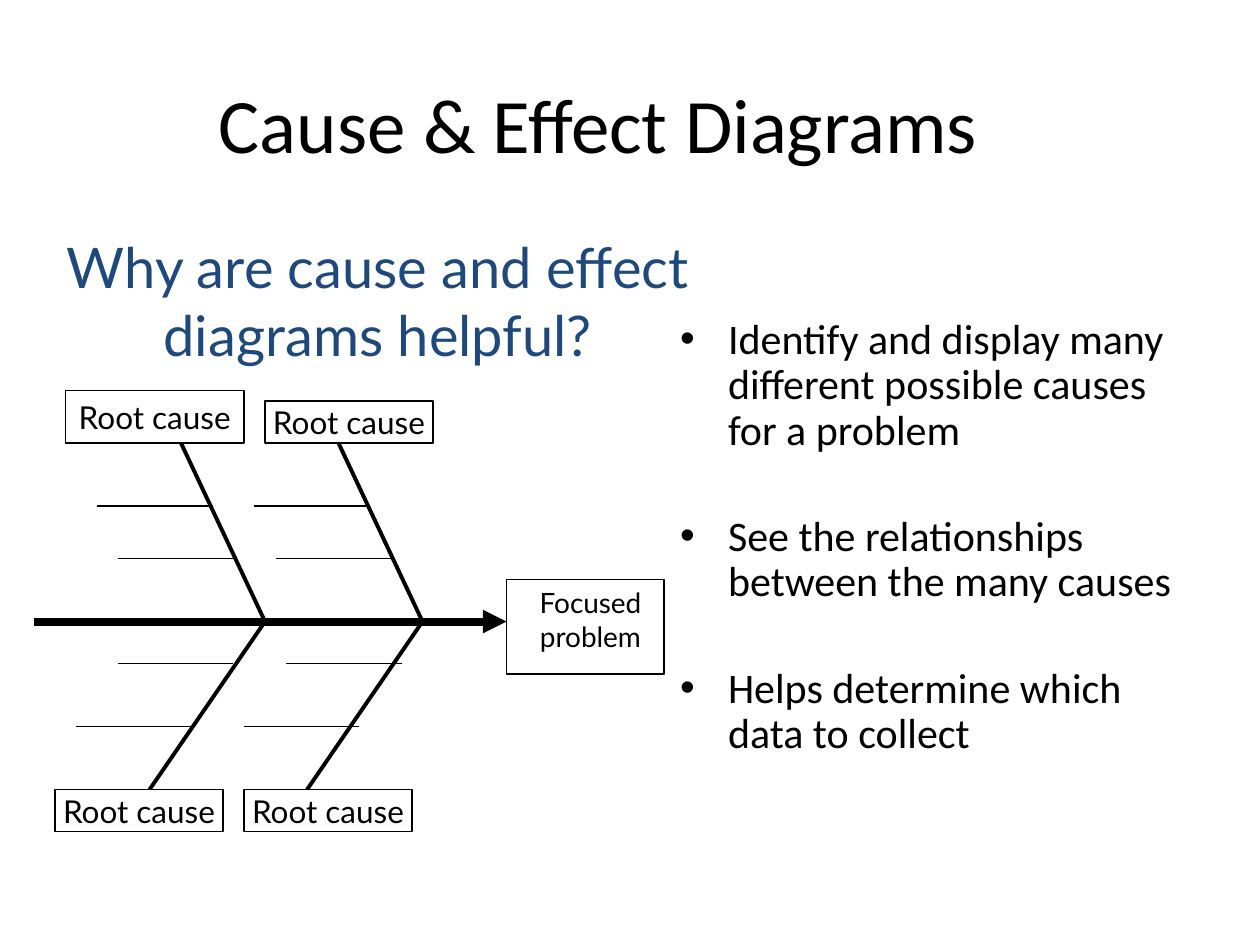
from pptx import Presentation
from pptx.dml.color import RGBColor
from pptx.enum.shapes import MSO_CONNECTOR, MSO_SHAPE
from pptx.enum.text import MSO_ANCHOR, PP_ALIGN
from pptx.oxml.ns import qn
from pptx.util import Inches, Pt
from lxml.etree import SubElement

BLACK = RGBColor(0, 0, 0)
WHITE = RGBColor(255, 255, 255)
NAVY = RGBColor(0x1F, 0x49, 0x7D)

COLS, ROWS = 60, 42
SPINE_ROW = 22
SPINE_END = 45
TWIG_LENGTH = 11
BONES = [(22, 14, 5), (22, 11, 38), (37, 29, 5), (37, 26, 38)]
CAUSES = [(3, 0, 17, 5), (22, 1, 16, 4), (2, 38, 16, 4), (20, 38, 16, 4)]
TWIGS = {11: (6, 21), 16: (8, 23), 26: (8, 24), 32: (4, 20)}
BENEFITS = [
    "Identify and display many different possible causes for a problem",
    "See the relationships between the many causes",
    "Helps determine which data to collect",
]


def share(prs, left, top, width, height):
    w, h = prs.slide_width, prs.slide_height
    return int(left * w), int(top * h), int(width * w), int(height * h)


def place(shape, box):
    shape.left, shape.top, shape.width, shape.height = box


def write(shape, *texts, size, font="Lato", color=BLACK, align=PP_ALIGN.CENTER,
          anchor=MSO_ANCHOR.TOP, wrap=True, bullet=False, gap=0, spacing=None):
    tf = shape.text_frame
    tf.word_wrap = wrap
    tf.vertical_anchor = anchor
    for i, text in enumerate(texts):
        p = tf.add_paragraph() if i else tf.paragraphs[0]
        p.alignment = align
        p.line_spacing = spacing
        if i:
            p.space_before = Pt(gap)
        if bullet:
            pPr = p._p.get_or_add_pPr()
            pPr.set("marL", str(Inches(0.38)))
            pPr.set("indent", str(-Inches(0.38)))
            SubElement(pPr, qn("a:buFont")).set("typeface", "Arial")
            SubElement(pPr, qn("a:buChar")).set("char", "•")
        r = p.add_run()
        r.text = text
        r.font.size, r.font.name = Pt(size), font
        r.font.color.rgb = color


def add_text(s, box, *texts, **fmt):
    write(s.shapes.add_textbox(*box), *texts, **fmt)


def add_line(s, start, end, width, arrow=False):
    line = s.shapes.add_connector(MSO_CONNECTOR.STRAIGHT, *start, *end)
    line.line.color.rgb = BLACK
    line.line.width = Pt(width)
    if arrow:
        SubElement(line.line._get_or_add_ln(), qn("a:tailEnd")).set("type", "triangle")
    SubElement(line._element.spPr, qn("a:effectLst"))


def add_box(s, box):
    sp = s.shapes.add_shape(MSO_SHAPE.RECTANGLE, *box)
    sp.shadow.inherit = False
    sp.fill.solid()
    sp.fill.fore_color.rgb = WHITE
    sp.line.color.rgb = BLACK
    sp.line.width = Pt(0.75)
    return sp


def fishbone(s, box):
    left, top, width, height = box

    def at(col, row):
        return int(left + col * width / COLS), int(top + row * height / ROWS)

    def cells(col, row, cols, rows):
        return (*at(col, row), int(cols * width / COLS), int(rows * height / ROWS))

    add_line(s, at(0, SPINE_ROW), at(SPINE_END, SPINE_ROW), 4.5, arrow=True)
    add_box(s, cells(SPINE_END, 18, 15, 9))
    add_text(s, cells(46, 18, 14, 8), "Focused problem", size=16)
    for joint, col, row in BONES:
        add_line(s, at(joint, SPINE_ROW), at(col, row), 2.25)
    for cause in CAUSES:
        write(add_box(s, cells(*cause)), "Root cause", size=18,
              anchor=MSO_ANCHOR.MIDDLE, wrap=False)
    for row, starts in TWIGS.items():
        for col in starts:
            add_line(s, at(col, row), at(col + TWIG_LENGTH, row), 0.75)


def heading(s, box):
    place(s.shapes.title, box)
    write(s.shapes.title, "Cause & Effect Diagrams", size=44, font="Calibri",
          anchor=MSO_ANCHOR.MIDDLE)


def benefits(s, box):
    add_text(s, box, *BENEFITS, size=24, font="Calibri", align=PP_ALIGN.LEFT,
             bullet=True, gap=35, spacing=0.9)


def main():
    prs = Presentation()
    prs.slide_width, prs.slide_height = Inches(10), Inches(7.5)
    s = prs.slides.add_slide(prs.slide_layouts[5])
    heading(s, share(prs, 0.09, 0.07, 0.77, 0.12))
    benefits(s, share(prs, 0.53, 0.33, 0.43, 0.59))
    add_text(s, share(prs, 0.02, 0.24, 0.56, 0.16),
             "Why are cause and effect diagrams helpful?", size=32, color=NAVY)
    fishbone(s, (Inches(0.27), Inches(3.1), Inches(5), Inches(3.5)))
    prs.save("out.pptx")


if __name__ == "__main__":
    main()
